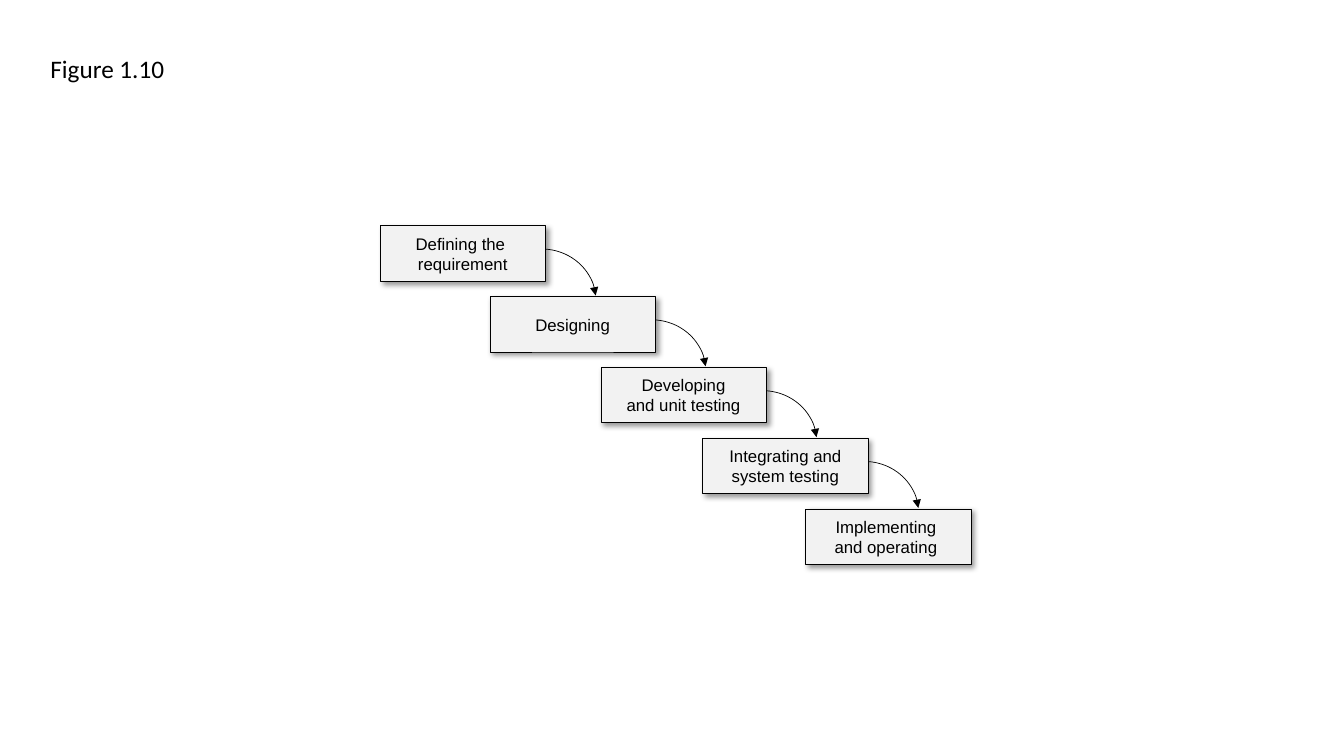
from dataclasses import dataclass

from lxml import etree
from pptx import Presentation
from pptx.dml.color import RGBColor
from pptx.enum import shapes, text
from pptx.oxml import ns
from pptx.util import Inches, Pt


@dataclass(frozen=True)
class Theme:
    ink: str = "000000"
    box_fill: str = "F2F2F2"
    title_font: str = "Calibri"
    box_font: str = "Arial"
    title_size: float = 18
    box_size: float = 12
    line_width: float = 0.5


THEME = Theme()
PHASES = [
    (3.77, "Defining the \vrequirement"),
    (4.86, "Designing"),
    (5.96, "Developing\nand unit testing"),
    (6.97, "Integrating and\vsystem testing"),
    (7.99, "Implementing \nand operating "),
]
FIRST_TOP, LAST_TOP = 2.24, 5.05
BOX_WIDTH, BOX_HEIGHT = 1.64, 0.55
ARC_OFFSET_X, ARC_OFFSET_Y = 1.09, 0.2
ARC_WIDTH, ARC_HEIGHT = 1.02, 1.08


def format_paragraphs(frame, font_name, size, alignment):
    for paragraph in frame.paragraphs:
        paragraph.alignment = alignment
        paragraph.font.name = font_name
        paragraph.font.size = Pt(size)
        paragraph.font.color.rgb = RGBColor.from_string(THEME.ink)


def format_line(shape):
    shape.line.color.rgb = RGBColor.from_string(THEME.ink)
    shape.line.width = Pt(THEME.line_width)


def add_drop_shadow(shape):
    shape.shadow.inherit = False
    effects = shape._element.spPr.find(ns.qn("a:effectLst"))
    shadow = etree.SubElement(
        effects, ns.qn("a:outerShdw"), blurRad=str(Pt(4)), dist=str(Pt(3)),
        dir=str(45 * 60000), algn="tl", rotWithShape="0")
    color = etree.SubElement(shadow, ns.qn("a:srgbClr"), val=THEME.ink)
    etree.SubElement(color, ns.qn("a:alpha"), val="40000")


def set_title(slide, wording):
    title = slide.shapes.title
    title.left, title.top = Inches(0.4), Inches(0.48)
    title.width, title.height = Inches(1.35), Inches(0.4)
    frame = title.text_frame
    frame.text = wording
    frame.word_wrap = False
    frame.auto_size = text.MSO_AUTO_SIZE.SHAPE_TO_FIT_TEXT
    frame.vertical_anchor = text.MSO_ANCHOR.TOP
    format_paragraphs(frame, THEME.title_font, THEME.title_size, text.PP_ALIGN.LEFT)


def add_phase(slide, left, top, wording):
    box = slide.shapes.add_shape(
        shapes.MSO_SHAPE.RECTANGLE, Inches(left), Inches(top),
        Inches(BOX_WIDTH), Inches(BOX_HEIGHT))
    box.fill.solid()
    box.fill.fore_color.rgb = RGBColor.from_string(THEME.box_fill)
    format_line(box)
    add_drop_shadow(box)
    frame = box.text_frame
    frame.text = wording
    frame.vertical_anchor = text.MSO_ANCHOR.MIDDLE
    format_paragraphs(frame, THEME.box_font, THEME.box_size, text.PP_ALIGN.CENTER)


def add_curved_arrow(slide, left, top):
    arc = slide.shapes.add_shape(
        shapes.MSO_SHAPE.ARC, Inches(left), Inches(top),
        Inches(ARC_WIDTH), Inches(ARC_HEIGHT))
    arc.rotation = 90
    arc.adjustments[0] = 110.97
    arc.adjustments[1] = 158.93
    arc.fill.background()
    arc.shadow.inherit = False
    format_line(arc)
    etree.SubElement(arc.line._get_or_add_ln(), ns.qn("a:tailEnd"), type="triangle")


def main():
    presentation = Presentation()
    presentation.slide_width = Inches(13.33)
    presentation.slide_height = Inches(7.5)
    slide = presentation.slides.add_slide(presentation.slide_layouts[5])
    set_title(slide, "Figure 1.10")

    step = (LAST_TOP - FIRST_TOP) / (len(PHASES) - 1)
    for index, (left, wording) in enumerate(PHASES):
        add_phase(slide, left, FIRST_TOP + index * step, wording)
    for index, (left, _) in enumerate(PHASES[:-1]):
        top = FIRST_TOP + index * step
        add_curved_arrow(slide, left + ARC_OFFSET_X, top + ARC_OFFSET_Y)

    presentation.save("out.pptx")


if __name__ == "__main__":
    main()
